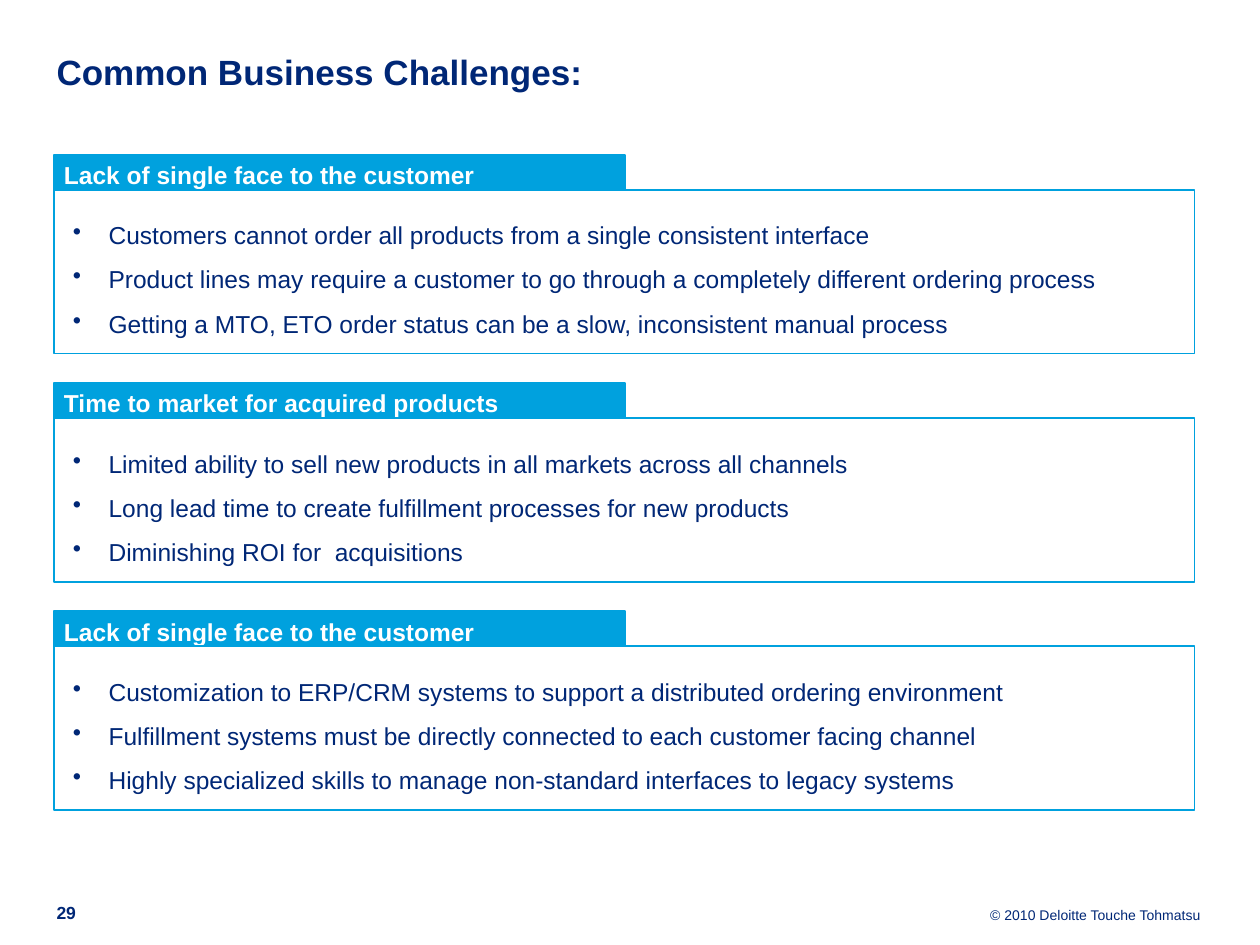
import pptx
import pptx.util
import pptx.dml.color
import pptx.enum.shapes
import pptx.enum.text
from lxml import etree
from pptx.util import Cm, Pt

RGB = pptx.dml.color.RGBColor.from_string
ALIGN = pptx.enum.text.PP_ALIGN
ANCHOR = pptx.enum.text.MSO_ANCHOR
RECT = pptx.enum.shapes.MSO_SHAPE.RECTANGLE

THEME = {
    "font": "Arial",
    "navy": RGB("002776"),
    "cyan": RGB("00A1DE"),
    "white": RGB("FFFFFF"),
    "title": Pt(20),
    "body": Pt(14),
    "number": Pt(10),
    "footer": Pt(8),
    "line": Pt(1),
}

SECTIONS = [
    ("Lack of single face to the customer", [
        "Customers cannot order all products from a single consistent interface",
        "Product lines may require a customer to go through a completely different ordering process",
        "Getting a MTO, ETO order status can be a slow, inconsistent manual process",
    ]),
    ("Time to market for acquired products", [
        "Limited ability to sell new products in all markets across all channels",
        "Long lead time to create fulfillment processes for new products",
        "Diminishing ROI for  acquisitions",
    ]),
    ("Lack of single face to the customer", [
        "Customization to ERP/CRM systems to support a distributed ordering environment",
        "Fulfillment systems must be directly connected to each customer facing channel",
        "Highly specialized skills to manage non-standard interfaces to legacy systems",
    ]),
]


def set_frame(tf, anchor, margins):
    """Wrap the text; margins run left, top, right, bottom in centimetres."""
    tf.word_wrap = True
    tf.vertical_anchor = anchor
    for side, margin in zip(("left", "top", "right", "bottom"), margins):
        setattr(tf, f"margin_{side}", Cm(margin))


def write(p, text, size, color, bold=False, align=ALIGN.LEFT, spacing=1.0):
    p.alignment = align
    p.line_spacing = spacing
    r = p.add_run()
    r.text = text
    style = {"name": THEME["font"], "size": THEME[size], "bold": bold}
    for name, value in style.items():
        setattr(r.font, name, value)
    r.font.color.rgb = THEME[color]


prs = pptx.Presentation()
prs.slide_width, prs.slide_height = Cm(25.4), Cm(19.05)
s = prs.slides.add_slide(prs.slide_layouts[6])

# Title, page number and copyright line
labels = [
    ((1.14, 0.97, 23.04, 0.84), "Common Business Challenges:",
     {"size": "title", "bold": True, "spacing": 1.06}),
    ((1.14, 18.21, 0.79, 0.41), "29",
     {"size": "number", "bold": True, "spacing": Pt(11.2)}),
    ((17.78, 18.21, 6.43, 0.41), "© 2010 Deloitte Touche Tohmatsu",
     {"size": "footer", "align": ALIGN.RIGHT, "spacing": Pt(11.3)}),
]
for place, text, style in labels:
    tf = s.shapes.add_textbox(*map(Cm, place)).text_frame
    set_frame(tf, ANCHOR.TOP, (0, 0, 0, 0))
    write(tf.paragraphs[0], text, color="navy", **style)

# Each section is a header tab on top of a bulleted panel
left, first_top, pitch = 1.09, 3.12, 4.6
tab_width, tab_height = 11.51, 0.71
panel_width, panel_height = 22.99, 3.3

for i, (heading, bullets) in enumerate(SECTIONS):
    top = first_top + i * pitch
    tab = s.shapes.add_shape(RECT, Cm(left), Cm(top), Cm(tab_width), Cm(tab_height))
    panel = s.shapes.add_shape(RECT, Cm(left), Cm(top + tab_height),
                               Cm(panel_width), Cm(panel_height))
    for sp in (tab, panel):
        sp.shadow.inherit = False
        sp.line.color.rgb = THEME["cyan"]
        sp.line.width = THEME["line"]
    tab.fill.solid()
    tab.fill.fore_color.rgb = THEME["cyan"]
    panel.fill.background()

    set_frame(tab.text_frame, ANCHOR.MIDDLE, (0.2, 0.2, 0.2, 0.1))
    write(tab.text_frame.paragraphs[0], heading, "body", "white", bold=True)

    tf = panel.text_frame
    set_frame(tf, ANCHOR.MIDDLE, (0.1, 0.1, 0.1, 0.1))
    for j, text in enumerate(bullets):
        p = tf.add_paragraph() if j else tf.paragraphs[0]
        pPr = p._p.get_or_add_pPr()
        pPr.set("marL", str(Cm(1)))
        pPr.set("indent", str(-Cm(0.72)))
        etree.SubElement(pPr, pptx.oxml.ns.qn("a:buChar"), char="•")
        write(p, text, "body", "navy", spacing=1.5)

prs.save("out.pptx")
